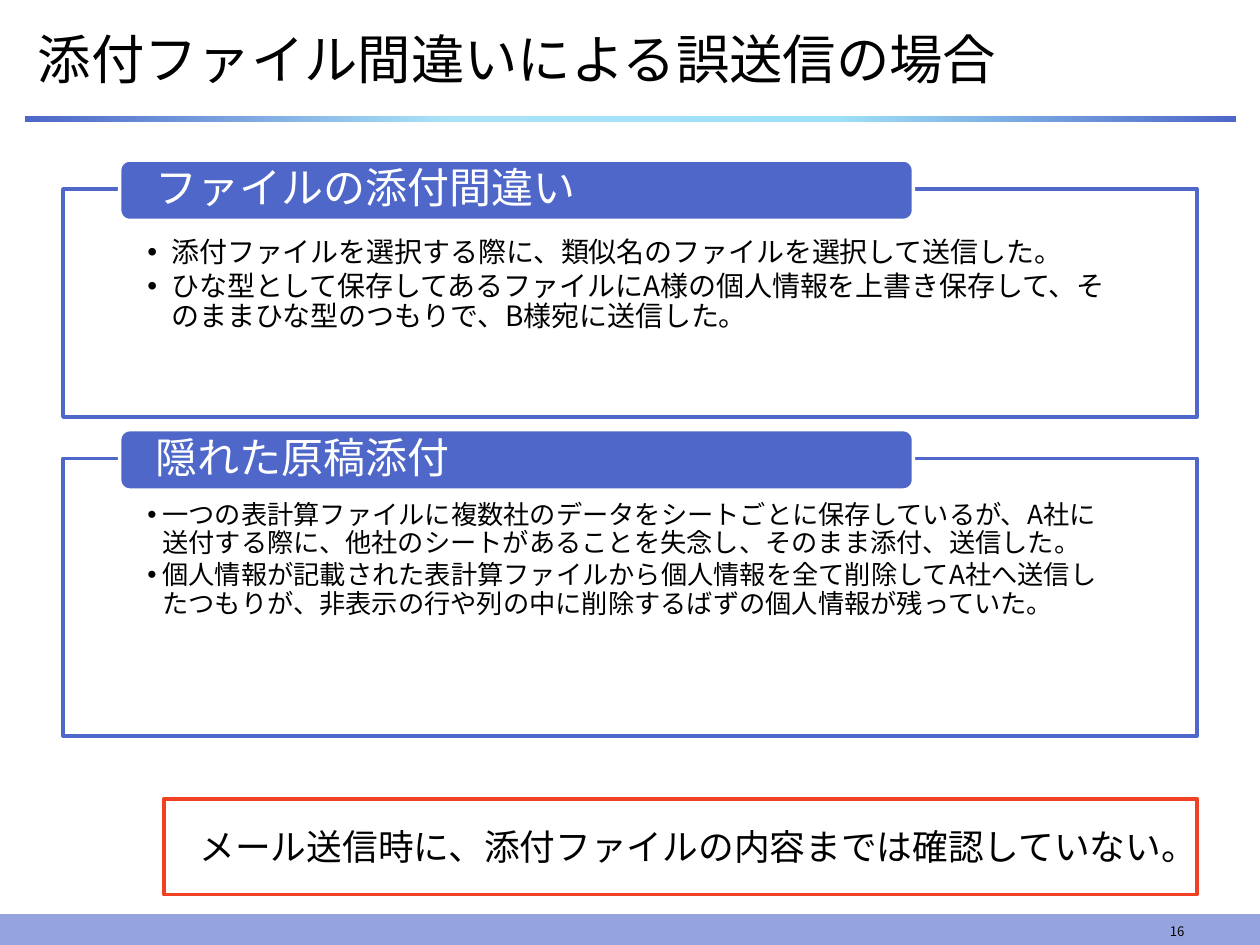
from lxml import etree
from pptx import Presentation
from pptx.dml.color import RGBColor
from pptx.enum import lang, shapes, text
from pptx.oxml.ns import qn
from pptx.util import Inches, Pt

FONT = "Noto Sans CJK JP"
BLUE, PALE_BLUE, RED, WHITE, BLACK = "4E67C8", "95A4DE", "F14124", "FFFFFF", "000000"
RULE_STOPS = [(0, BLUE), (35, "A9E3F8"), (67, "9EE0F7"), (100, BLUE)]
LEFT, CENTER, RIGHT = text.PP_ALIGN.LEFT, text.PP_ALIGN.CENTER, text.PP_ALIGN.RIGHT
TOP, MIDDLE, BOTTOM = text.MSO_ANCHOR.TOP, text.MSO_ANCHOR.MIDDLE, text.MSO_ANCHOR.BOTTOM
RECT, ROUNDED = shapes.MSO_SHAPE.RECTANGLE, shapes.MSO_SHAPE.ROUNDED_RECTANGLE


def color(value):
    return RGBColor.from_string(value)


def add_box(slide, box, kind, fill, line=None, width=2):
    shape = slide.shapes.add_shape(kind, *map(Inches, box))
    shape.shadow.inherit = False
    shape.fill.solid()
    shape.fill.fore_color.rgb = color(fill)
    if line:
        shape.line.color.rgb = color(line)
        shape.line.width = Pt(width)
    else:
        shape.line.fill.background()
    return shape


def write(shape, lines, size, ink=BLACK, align=LEFT, anchor=MIDDLE,
          insets=(0.1, 0.05, 0.1, 0.05), spacing=1.0):
    frame = shape.text_frame
    settings = {"word_wrap": True, "auto_size": text.MSO_AUTO_SIZE.NONE,
                "vertical_anchor": anchor}
    sides = ("margin_left", "margin_top", "margin_right", "margin_bottom")
    settings.update(zip(sides, map(Inches, insets)))
    for name, value in settings.items():
        setattr(frame, name, value)
    for index, line in enumerate(lines):
        paragraph = frame.add_paragraph() if index else frame.paragraphs[0]
        paragraph.alignment = align
        paragraph.line_spacing = spacing
        run = paragraph.add_run()
        run.text = line
        font = {"name": FONT, "size": Pt(size), "language_id": lang.MSO_LANGUAGE_ID.JAPANESE}
        for name, value in font.items():
            setattr(run.font, name, value)
        run.font.color.rgb = color(ink)
        latin = run.font._element.find(qn("a:latin"))
        east_asian = etree.Element(qn("a:ea"), typeface=FONT)
        latin.addnext(east_asian)


def add_bullets(shape, size, indent):
    for paragraph in shape.text_frame.paragraphs:
        paragraph.space_after = Pt(size * 0.15)
        properties = paragraph._p.get_or_add_pPr()
        properties.set("marL", str(Inches(indent)))
        properties.set("indent", str(-Inches(indent)))
        etree.SubElement(properties, qn("a:buFont"), typeface="Arial")
        etree.SubElement(properties, qn("a:buChar"), char="•")


def add_header(slide, box, heading):
    """Title above a rule that fades to light blue in its middle."""
    left, top, width, height = box
    title = slide.shapes.title
    places = zip(("left", "top", "width", "height"), (left, top, width, 0.65))
    for name, value in places:
        setattr(title, name, Inches(value))
    write(title, [heading], 30.5)

    rule = add_box(slide, (left, top + height - 0.05, width, 0.05), RECT, BLUE)
    rule.fill.gradient()
    rule.fill.gradient_angle = 0
    stops = rule._element.spPr.find(qn("a:gradFill")).find(qn("a:gsLst"))
    for stop in list(stops):
        stops.remove(stop)
    for percent, value in RULE_STOPS:
        stop = etree.SubElement(stops, qn("a:gs"), pos=str(percent * 1000))
        etree.SubElement(stop, qn("a:srgbClr"), val=value)


def add_case(slide, box, label, points, size, indent, top_inset):
    """Outlined panel of bullets with a label across its top edge."""
    left, top, _, _ = box
    panel = add_box(slide, box, RECT, WHITE, BLUE)
    write(panel, points, size, anchor=TOP,
          insets=(0.67, top_inset, 0.67, 0.12), spacing=0.9)
    add_bullets(panel, size, indent)
    tab = add_box(slide, (left + 0.45, top - 0.23, 6.3, 0.48), ROUNDED, BLUE, WHITE)
    write(tab, [label], 24, WHITE, insets=(0.26, 0, 0.26, 0), spacing=0.9)


def add_conclusion(slide, box, message):
    write(add_box(slide, box, RECT, WHITE, RED), [message], 20.4,
          align=CENTER, insets=(0.2, 0.2, 0.2, 0.2))


def add_footer(slide, box, number):
    left, top, width, height = box
    add_box(slide, box, RECT, PALE_BLUE, PALE_BLUE, 0.75)
    page = slide.shapes.add_textbox(
        *map(Inches, (left + width - 2.83, top, 2.33, height)))
    write(page, [number], 7.5, align=RIGHT, anchor=BOTTOM)


def main():
    deck = Presentation()
    deck.slide_width, deck.slide_height = Inches(10), Inches(7.5)
    slide = deck.slides.add_slide(deck.slide_layouts[5])
    add_footer(slide, (0, 7.26, 10, 0.24), "16")
    add_header(slide, (0.2, 0.14, 9.61, 0.83), "添付ファイル間違いによる誤送信の場合")
    add_case(slide, (0.5, 1.5, 9, 1.81), "ファイルの添付間違い", [
        "添付ファイルを選択する際に、類似名のファイルを選択して送信した。",
        "ひな型として保存してあるファイルにA様の個人情報を上書き保存して、"
        "そのままひな型のつもりで、B様宛に送信した。",
    ], size=16, indent=0.19, top_inset=0.39)
    add_case(slide, (0.5, 3.64, 9, 2.2), "隠れた原稿添付", [
        "一つの表計算ファイルに複数社のデータをシートごとに保存しているが、A社に"
        "送付する際に、他社のシートがあることを失念し、そのまま添付、送信した。",
        "個人情報が記載された表計算ファイルから個人情報を全て削除してA社へ送信し"
        "たつもりが、非表示の行や列の中に削除するばずの個人情報が残っていた。",
    ], size=15, indent=0.12, top_inset=0.34)
    add_conclusion(slide, (1.3, 6.34, 8.2, 0.76),
                   "メール送信時に、添付ファイルの内容までは確認していない。")
    deck.save("out.pptx")


if __name__ == "__main__":
    main()
